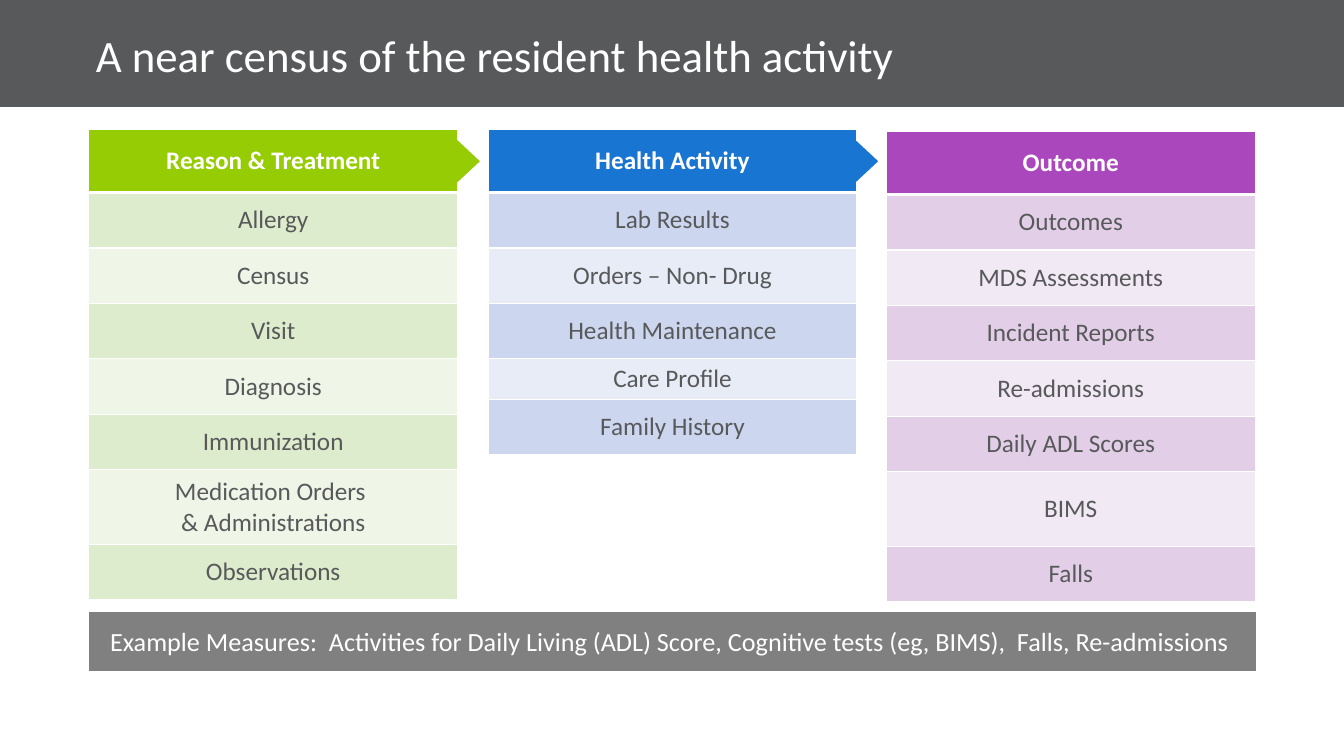
"""Build a slide of three health record columns that lead to outcome measures."""
from lxml.etree import SubElement
from pptx import Presentation
from pptx.dml.color import RGBColor
from pptx.enum.shapes import MSO_SHAPE as Shape
from pptx.enum.text import MSO_ANCHOR as Anchor, MSO_AUTO_SIZE as AutoSize, PP_ALIGN as Align
from pptx.oxml.ns import qn
from pptx.util import Inches, Pt

TITLE = "A near census of the resident health activity"
MEASURES = ("Example Measures:  Activities for Daily Living (ADL) Score, "
            "Cognitive tests (eg, BIMS),  Falls, Re-admissions ")
COLORS = {
    "white": "FFFFFF", "dark": "58595B", "gray": "808080",
    "green": "96CC04", "green band": "DDECCC", "green pale": "EFF6E7",
    "blue": "1975D2", "blue band": "CCD6EE", "blue pale": "E8ECF7",
    "purple": "AB47BC", "purple band": "E2CFE7", "purple pale": "F1E9F3",
}
COLUMNS = [
    {"hue": "green", "left": 0.88, "top": 1.28, "heading": "Reason & Treatment",
     "items": ["Allergy", "Census", "Visit", "Diagnosis", "Immunization",
               "Medication Orders \n& Administrations", "Observations"]},
    {"hue": "blue", "left": 4.84, "top": 1.28, "heading": "Health Activity",
     "items": ["Lab Results", "Orders – Non- Drug", "Health Maintenance",
               "Care Profile", "Family History"]},
    {"hue": "purple", "left": 8.79, "top": 1.3, "heading": "Outcome",
     "items": ["Outcomes", "MDS Assessments", "Incident Reports", "Re-admissions",
               "Daily ADL Scores", "BIMS", "Falls"]},
]
COLUMN_WIDTH, HEADING_HEIGHT, ROW_HEIGHT = 3.66, 0.63, 0.55
ROW_HEIGHTS = {"Care Profile": 0.3, "BIMS": 0.74, COLUMNS[0]["items"][5]: 0.74}
ARROWS = [("green", 4.33), ("blue", 8.28)]


def color(name):
    return RGBColor.from_string(COLORS[name])


def write(para, text, size, tint, bold=False, align=Align.CENTER):
    para.text = text
    para.alignment = align
    para.font.color.rgb = color(tint)
    for key, value in {"name": "Calibri", "size": Pt(size), "bold": bold}.items():
        setattr(para.font, key, value)


def add_block(page, kind, box, fill):
    block = page.shapes.add_shape(kind, *map(Inches, box))
    block.shadow.inherit = False
    block.fill.solid()
    block.fill.fore_color.rgb = color(fill)
    block.line.fill.background()
    return block


def set_borders(cell, top, bottom):
    properties = cell._tc.get_or_add_tcPr()
    for side, width in {"L": 1, "R": 1, "T": top, "B": bottom}.items():
        line = SubElement(properties, qn(f"a:ln{side}"), w=str(Pt(width)))
        fill = SubElement(line, qn("a:solidFill"))
        SubElement(fill, qn("a:srgbClr"), val=COLORS["white"])


def add_column(page, hue, left, top, heading, items):
    heights = [HEADING_HEIGHT] + [ROW_HEIGHTS.get(item, ROW_HEIGHT) for item in items]
    box = map(Inches, (left, top, COLUMN_WIDTH, sum(heights)))
    table = page.shapes.add_table(len(heights), 1, *box).table
    table.horz_banding = False
    for index, (text, height) in enumerate(zip([heading] + items, heights)):
        table.rows[index].height = Inches(height)
        cell = table.cell(index, 0)
        is_heading = index == 0
        set_borders(cell, 3 if index == 1 else 1, 3 if is_heading else 1)
        cell.fill.solid()
        shade = hue if is_heading else f"{hue} {'band' if index % 2 else 'pale'}"
        cell.fill.fore_color.rgb = color(shade)
        cell.vertical_anchor = Anchor.MIDDLE
        write(cell.text_frame.paragraphs[0], text, 18, "white" if is_heading else "dark", is_heading)


def add_title(page):
    bar = add_block(page, Shape.RECTANGLE, (0, 0, 13.33, 1.06), "dark")
    title = page.shapes.title
    bar.element.addnext(title.element)
    for key, value in {"left": 0.85, "top": 0.08, "width": 11.62, "height": 0.99}.items():
        setattr(title, key, Inches(value))
    frame = title.text_frame
    for key, value in {"vertical_anchor": Anchor.MIDDLE, "word_wrap": True,
                       "auto_size": AutoSize.NONE}.items():
        setattr(frame, key, value)
    para = frame.paragraphs[0]
    write(para, TITLE, 32, "white", align=Align.LEFT)
    para.line_spacing = 0.9


def add_measures(page):
    block = add_block(page, Shape.RECTANGLE, (0.86, 6.05, 11.62, 0.63), "gray")
    block.line.color.rgb = color("white")
    block.line.width = Pt(3)
    frame = block.text_frame
    for key, value in {"margin_top": Inches(0.16), "margin_bottom": Inches(0.16),
                       "word_wrap": True, "vertical_anchor": Anchor.TOP,
                       "auto_size": AutoSize.SHAPE_TO_FIT_TEXT}.items():
        setattr(frame, key, value)
    write(frame.paragraphs[0], MEASURES, 18.7, "white")


def main():
    deck = Presentation()
    deck.slide_width, deck.slide_height = Inches(13.33), Inches(7.5)
    page = deck.slides.add_slide(deck.slide_layouts[5])
    add_title(page)
    add_measures(page)
    for column in COLUMNS:
        add_column(page, **column)
    for hue, left in ARROWS:
        add_block(page, Shape.ISOSCELES_TRIANGLE, (left, 1.45, 0.56, 0.3), hue).rotation = 90
    deck.save("out.pptx")


if __name__ == "__main__":
    main()
